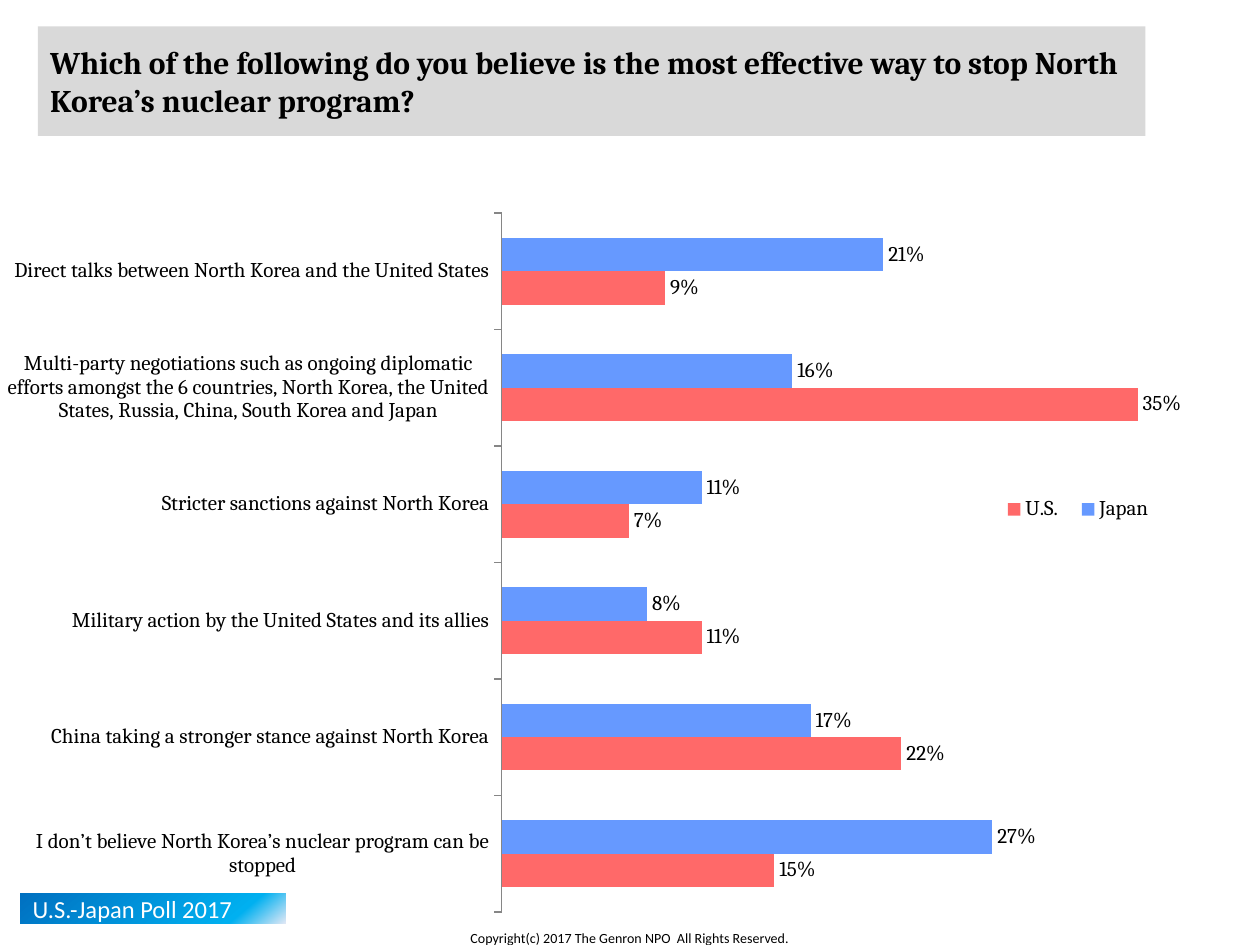
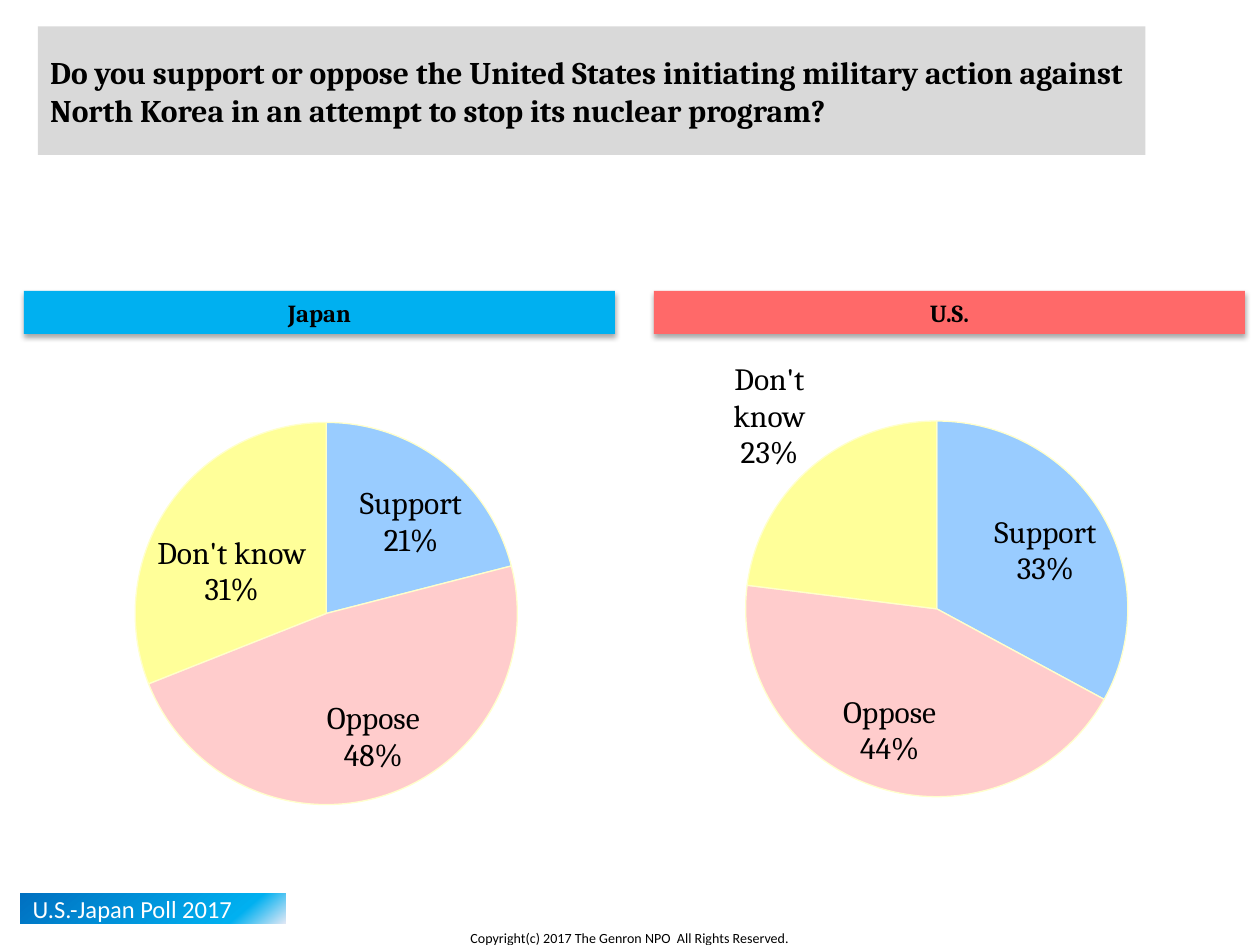
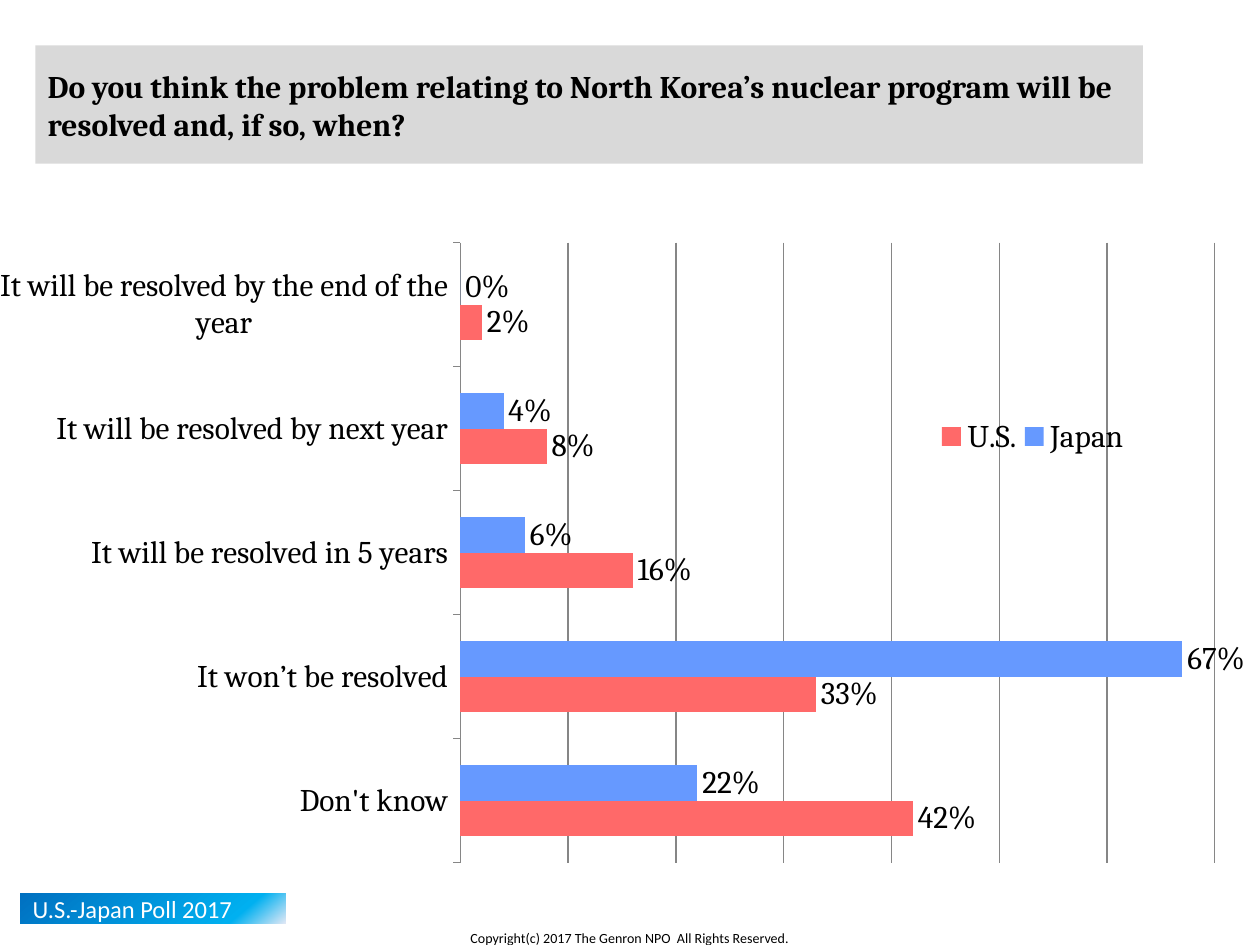
from pptx import Presentation
from pptx.chart.data import CategoryChartData
from pptx.dml.color import RGBColor
from pptx.enum.chart import XL_CHART_TYPE, XL_LABEL_POSITION, XL_LEGEND_POSITION, XL_TICK_LABEL_POSITION, XL_TICK_MARK
from pptx.enum.shapes import MSO_SHAPE
from pptx.enum.text import MSO_ANCHOR, PP_ALIGN
from pptx.oxml import parse_xml
from pptx.oxml.ns import nsdecls, qn
from pptx.util import Inches, Pt

BAR, PIE = XL_CHART_TYPE.BAR_CLUSTERED, XL_CHART_TYPE.PIE
OUTSIDE, BEST_FIT = XL_LABEL_POSITION.OUTSIDE_END, XL_LABEL_POSITION.BEST_FIT
LEFT, CENTER = PP_ALIGN.LEFT, PP_ALIGN.CENTER

COLORS = {
    "text": "000000", "white": "FFFFFF", "title": "D9D9D9", "axis": "868686",
    "japan": "6699FF", "us": "FF6969", "japan_band": "00B0F0",
    "support": "99CCFF", "oppose": "FFCCCC", "unknown": "FFFF99", "pie_edge": "FFFFCC",
}
SERIF, SANS = "Cambria", "Calibri"
COPYRIGHT = "Copyright(c) 2017 The Genron NPO  All Rights Reserved."
POLL = "U.S.-Japan Poll 2017"
POLL_GRADIENT = [(0, "0070C0"), (81, "00B0F0"), (100, "E1E8F5")]
POLL_ANGLE = 50

WAYS = {
    "title": "Which of the following do you believe is the most effective way to stop "
             "North Korea’s nuclear program?",
    "title_box": (0.3, 0.21, 8.79, 0.87),
    "rows": [  # answer, Japan, U.S.
        ("Direct talks between North Korea and the United States", 0.21, 0.09),
        ("Multi-party negotiations such as ongoing diplomatic efforts amongst the "
         "6 countries, North Korea, the United States, Russia, China, South Korea and Japan",
         0.16, 0.35),
        ("Stricter sanctions against North Korea", 0.11, 0.07),
        ("Military action by the United States and its allies", 0.08, 0.11),
        ("China taking a stronger stance against North Korea", 0.17, 0.22),
        ("I don’t believe North Korea’s nuclear program can be stopped", 0.27, 0.15),
    ],
    "box": (0.06, 1.37, 9.88, 5.94), "size": 12, "max": 0.4, "grid": False,
    "plot": (0.397, 0.054, 0.584, 0.934), "legend": (0.79, 0.43, 0.14, 0.04),
}
ACTION = {
    "title": "Do you support or oppose the United States initiating military action "
             "against North Korea in an attempt to stop its nuclear program?",
    "title_box": (0.3, 0.21, 8.79, 1.02),
    "answers": [("Support", "support"), ("Oppose", "oppose"), ("Don't know", "unknown")],
    "countries": [  # name, band colour, band left, shares, chart box
        ("Japan", "japan_band", 0.19, (0.21, 0.48, 0.31), (0, 2.88, 5.19, 3.94)),
        ("U.S.", "us", 5.19, (0.33, 0.44, 0.23), (4.88, 2.81, 5.12, 3.94)),
    ],
    "plot": (0.089, 0.12, 0.82, 0.77),
}
TIMING = {
    "title": "Do you think the problem relating to North Korea’s nuclear program will be "
             "resolved and, if so, when?",
    "title_box": (0.28, 0.36, 8.79, 0.94),
    "rows": [
        ("It will be resolved by the end of the year", 0, 0.02),
        ("It will be resolved by next year", 0.04, 0.08),
        ("It will be resolved in 5 years", 0.06, 0.16),
        ("It won’t be resolved", 0.67, 0.33),
        ("Don't know", 0.22, 0.42),
    ],
    "box": (0, 1.62, 9.88, 5.27), "size": 18, "max": 0.7, "grid": True,
    "plot": (0.368, 0.058, 0.609, 0.934), "legend": (0.75, 0.32, 0.16, 0.06),
}


def rgb(name):
    return RGBColor.from_string(COLORS[name])


def inches(box):
    return [Inches(v) for v in box]


def style_font(font, size, name=SERIF, color="text", bold=False):
    font.size, font.name, font.bold = Pt(size), name, bold
    font.color.rgb = rgb(color)


def write(sp, text, size, name=SERIF, color="text", bold=False, align=LEFT):
    tf = sp.text_frame
    tf.text = text
    tf.word_wrap = True
    p = tf.paragraphs[0]
    p.alignment = align
    style_font(p.runs[0].font, size, name, color, bold)


def add_band(slide, box, text, size, fill=None, **style):
    """Rectangle without outline, its text centred vertically."""
    sp = slide.shapes.add_shape(MSO_SHAPE.RECTANGLE, *inches(box))
    sp.shadow.inherit = False
    sp.line.fill.background()
    if fill:
        sp.fill.solid()
        sp.fill.fore_color.rgb = rgb(fill)
    write(sp, text, size, **style)
    sp.text_frame.vertical_anchor = MSO_ANCHOR.MIDDLE
    return sp


def set_gradient(sp, stops, angle):
    sp.fill.background()
    gs = "".join(f'<a:gs pos="{pos * 1000}"><a:srgbClr val="{color}"/></a:gs>'
                 for pos, color in stops)
    grad = parse_xml(f'<a:gradFill {nsdecls("a")} rotWithShape="1"><a:gsLst>{gs}</a:gsLst>'
                     f'<a:lin ang="{angle * 60000}" scaled="0"/></a:gradFill>')
    spPr = sp._element.spPr
    spPr.replace(spPr.find(qn("a:noFill")), grad)


def add_shadow(sp):
    sp._element.spPr.find(qn("a:effectLst")).append(parse_xml(
        f'<a:outerShdw {nsdecls("a")} blurRad="{Pt(3.1)}" dist="{Pt(1.8)}" dir="5400000" '
        'rotWithShape="0"><a:srgbClr val="000000"><a:alpha val="35000"/></a:srgbClr>'
        '</a:outerShdw>'))


def add_slide(prs, content):
    """Blank slide with the question, the poll tag and the copyright line."""
    slide = prs.slides.add_slide(prs.slide_layouts[6])
    footer = slide.shapes.add_textbox(*inches((2.27, 7.33, 5.46, 0.24)))
    write(footer, COPYRIGHT, 8, SANS, align=CENTER)
    add_band(slide, content["title_box"], content["title"], 18, "title", bold=True)
    tag = add_band(slide, (0.16, 7.09, 2.11, 0.24), POLL, 14, name=SANS, color="white")
    set_gradient(tag, POLL_GRADIENT, POLL_ANGLE)
    return slide


def set_layout(element, index, box, inner=False):
    """Place a plot area or legend by fractions of its chart."""
    old = element.find(qn("c:layout"))
    if old is not None:
        element.remove(old)
    target = '<c:layoutTarget val="inner"/>' if inner else ""
    modes = '<c:xMode val="edge"/><c:yMode val="edge"/>'
    places = "".join(f'<c:{tag} val="{v}"/>' for tag, v in zip("xywh", box))
    element.insert(index, parse_xml(
        f'<c:layout {nsdecls("c")}><c:manualLayout>{target}{modes}{places}'
        '</c:manualLayout></c:layout>'))


def add_chart(slide, kind, box, categories, series, plot_box, size, label_position):
    data = CategoryChartData(number_format="0%")
    data.categories = categories
    for name, values in series:
        data.add_series(name, values)
    chart = slide.shapes.add_chart(kind, *inches(box), data).chart
    chart.has_title = False
    chart.has_legend = False
    style_font(chart.font, size)
    set_layout(chart._chartSpace.chart.plotArea, 0, plot_box, inner=True)
    plot = chart.plots[0]
    plot.has_data_labels = True
    labels = plot.data_labels
    labels.show_value = True
    labels.number_format, labels.number_format_is_linked = "0%", False
    labels.position = label_position
    style_font(labels.font, size)
    return chart


def add_bars(slide, content):
    answers, japan, us = zip(*content["rows"])
    chart = add_chart(slide, BAR, content["box"], answers, [("Japan", japan), ("U.S.", us)],
                      content["plot"], content["size"], OUTSIDE)
    plot = chart.plots[0]
    plot.gap_width, plot.overlap, plot.vary_by_categories = 150, 0, False
    for ser, color in zip(plot.series, ("japan", "us")):
        ser.format.fill.solid()
        ser.format.fill.fore_color.rgb = rgb(color)

    cat_axis, val_axis = chart.category_axis, chart.value_axis
    cat_axis.reverse_order = True
    cat_axis.has_major_gridlines = False
    cat_axis.major_tick_mark = XL_TICK_MARK.OUTSIDE
    cat_axis.tick_label_position = XL_TICK_LABEL_POSITION.NEXT_TO_AXIS
    cat_axis.format.line.color.rgb = rgb("axis")
    val_axis.visible = False
    val_axis.minimum_scale, val_axis.maximum_scale = 0, content["max"]
    val_axis.major_unit = 0.1
    val_axis.has_major_gridlines = content["grid"]
    if content["grid"]:
        val_axis.major_gridlines.format.line.color.rgb = rgb("axis")

    chart.has_legend = True
    legend = chart.legend
    legend.position = XL_LEGEND_POSITION.RIGHT
    legend.include_in_layout = False
    style_font(legend.font, content["size"])
    set_layout(legend._element, 1, content["legend"])


def add_pie(slide, box, shares):
    answers, colors = zip(*ACTION["answers"])
    chart = add_chart(slide, PIE, box, answers, [("Share", shares)], ACTION["plot"], 18, BEST_FIT)
    plot = chart.plots[0]
    labels = plot.data_labels
    labels.show_category_name = True
    labels.show_percentage = False
    separator = parse_xml(f'<c:separator {nsdecls("c")}>\n</c:separator>')
    last_flag = [e for e in labels._element if e.tag.startswith(qn("c:show"))
                 and e.tag != qn("c:showLeaderLines")][-1]
    last_flag.addnext(separator)
    for i, color in enumerate(colors):
        point = plot.series[0].points[i].format
        point.fill.solid()
        point.fill.fore_color.rgb = rgb(color)
        point.line.color.rgb = rgb("pie_edge")
        point.line.width = Pt(0.75)


def main():
    prs = Presentation()
    prs.slide_width, prs.slide_height = Inches(10), Inches(7.5)

    add_bars(add_slide(prs, WAYS), WAYS)

    slide = add_slide(prs, ACTION)
    for name, color, left, shares, box in ACTION["countries"]:
        add_pie(slide, box, shares)
        band = add_band(slide, (left, 2.31, 4.69, 0.34), name, 14, color, bold=True, align=CENTER)
        add_shadow(band)

    add_bars(add_slide(prs, TIMING), TIMING)
    prs.save("out.pptx")


if __name__ == "__main__":
    main()
